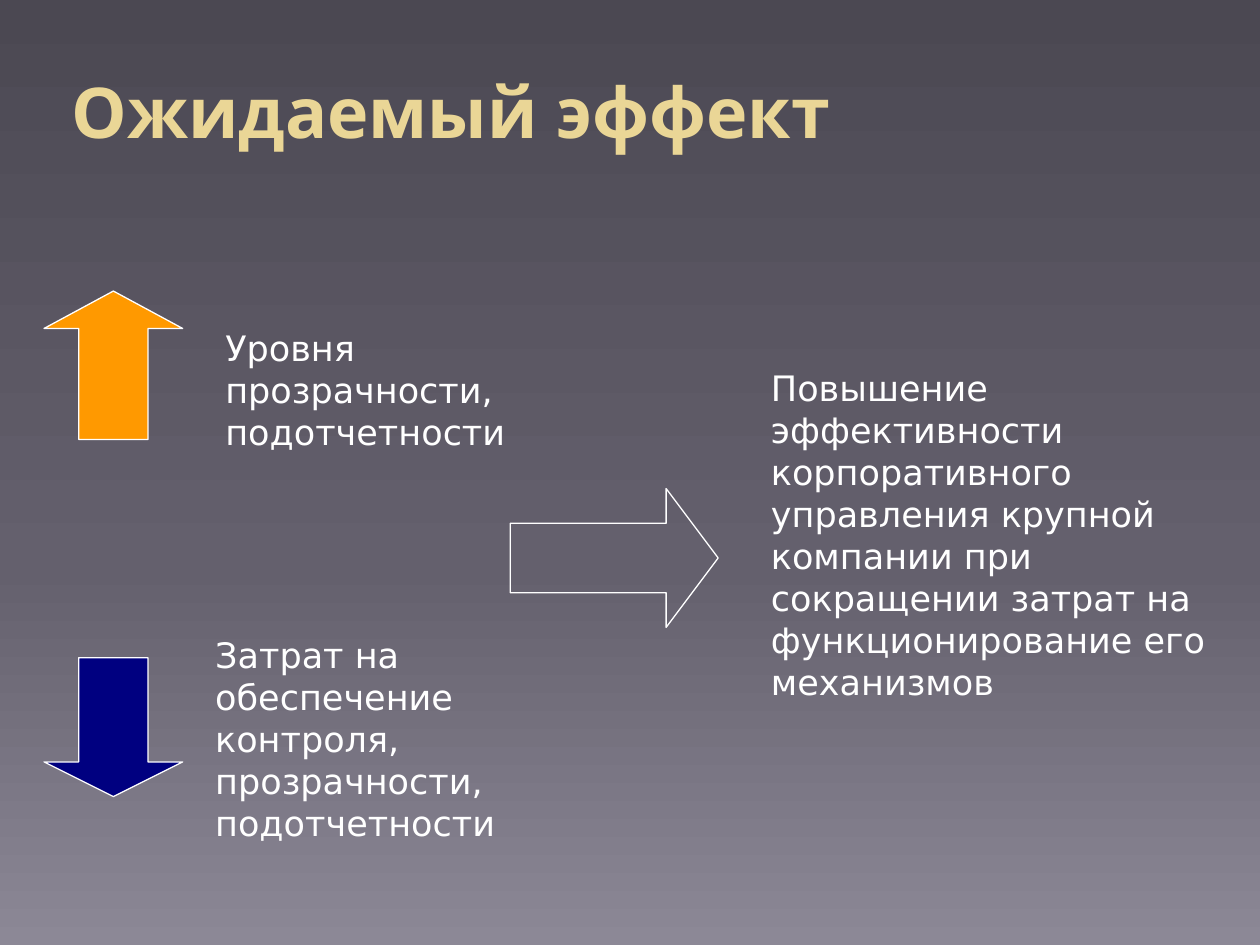
from copy import deepcopy
from pptx import Presentation
from pptx.dml.color import RGBColor
from pptx.enum.shapes import MSO_SHAPE
from pptx.enum.text import MSO_ANCHOR
from pptx.oxml.ns import qn
from pptx.util import Inches, Pt

WIDE, HIGH = 10, 7.5
HUES = {
    "top": "4B4852", "mid": "64606D", "base": "8C8896",
    "gold": "EAD696", "white": "FFFFFF", "rise": "FF9900", "fall": "000080",
}
STOPS = [("top", 0), ("mid", 0.6), ("base", 1)]
TITLE = ("Ожидаемый эффект", (0.047, 0.083, 0.74, 0.085))
NOTES = [
    ("Уровня прозрачности, подотчетности", (0.169, 0.339, 0.307, 0.147)),
    ("Затрат на обеспечение контроля, прозрачности, подотчетности",
     (0.161, 0.664, 0.307, 0.236)),
    ("Повышение эффективности корпоративного управления крупной компании "
     "при сокращении затрат на функционирование его механизмов",
     (0.602, 0.381, 0.382, 0.372)),
]
ARROWS = [
    (MSO_SHAPE.UP_ARROW, "rise", 0.25, (0.035, 0.308, 0.11, 0.157)),
    (MSO_SHAPE.DOWN_ARROW, "fall", 0.25, (0.035, 0.696, 0.11, 0.147)),
    (MSO_SHAPE.RIGHT_ARROW, None, 0.375, (0.405, 0.517, 0.165, 0.147)),
]
ARROWS[0] = ARROWS[0][:2] + (0.27,) + ARROWS[0][3:]


def hue(name):
    return RGBColor.from_string(HUES[name])


def place(box):
    return [Inches(part * side) for part, side in zip(box, (WIDE, HIGH) * 2)]


def paint(slide):
    fill = slide.background.fill
    fill.gradient()
    fill.gradient_angle = 270
    stops = next(slide.element.iter(qn("a:gsLst")))
    stops.append(deepcopy(stops[-1]))
    for stop, (name, pos) in zip(fill.gradient_stops, STOPS):
        stop.color.rgb = hue(name)
        stop.position = pos


def write(slide, text, box, font="DejaVu Sans", size=20, tint="white",
          bold=False, gap=1):
    frame = slide.shapes.add_textbox(*place(box)).text_frame
    frame.word_wrap = True
    frame.vertical_anchor = MSO_ANCHOR.TOP
    para = frame.paragraphs[0]
    para.line_spacing = gap
    run = para.add_run()
    run.text = text
    run.font.name = font
    run.font.size = Pt(size)
    run.font.bold = bold
    run.font.color.rgb = hue(tint)


def arrow(slide, kind, tint, head, box):
    shape = slide.shapes.add_shape(kind, *place(box))
    shape.shadow.inherit = False
    shape.adjustments[0] = 0.5
    shape.adjustments[1] = head
    if tint:
        shape.fill.solid()
        shape.fill.fore_color.rgb = hue(tint)
    else:
        shape.fill.background()
    shape.line.color.rgb = hue("white")
    shape.line.width = Pt(0.75)


def main():
    deck = Presentation()
    deck.slide_width, deck.slide_height = Inches(WIDE), Inches(HIGH)
    slide = deck.slides.add_slide(deck.slide_layouts[6])
    paint(slide)
    write(slide, *TITLE, font="Quicksand", size=40, tint="gold",
          bold=True, gap=0.8)
    for note in NOTES:
        write(slide, *note)
    for item in ARROWS:
        arrow(slide, *item)
    deck.save("out.pptx")


if __name__ == "__main__":
    main()
